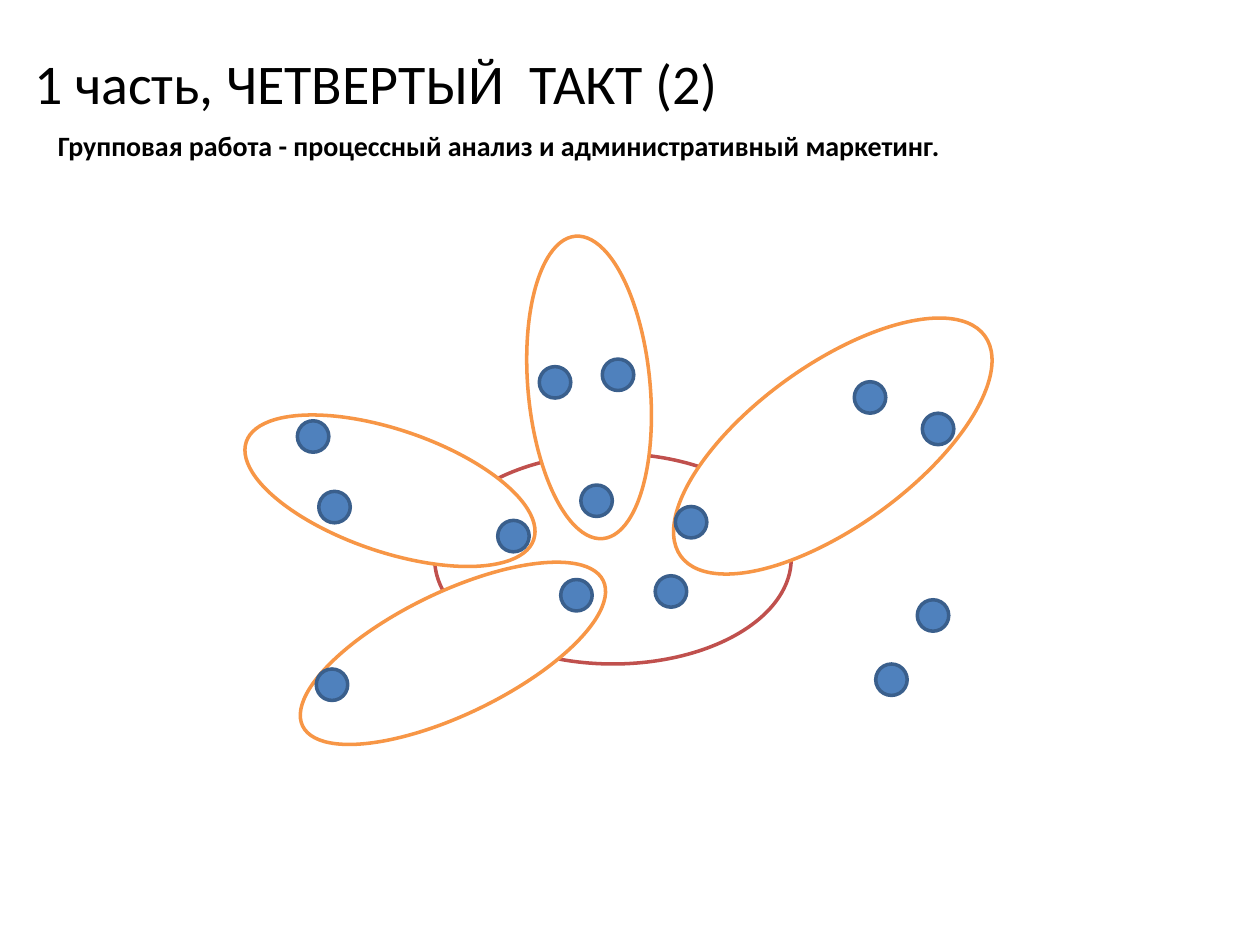
from dataclasses import dataclass

from lxml import etree
from pptx import Presentation
from pptx.dml.color import RGBColor
from pptx.enum.shapes import MSO_SHAPE
from pptx.enum.text import MSO_ANCHOR, PP_ALIGN
from pptx.oxml.ns import qn
from pptx.util import Inches, Pt

OVAL = MSO_SHAPE.OVAL
LEFT = PP_ALIGN.LEFT
TOP, MIDDLE = MSO_ANCHOR.TOP, MSO_ANCHOR.MIDDLE
SLIDE_W, SLIDE_H = Inches(10), Inches(7.5)
FONT = "Calibri"
BLACK, WHITE = "000000", "FFFFFF"
RED, ORANGE = "C0504D", "F79646"
BLUE, DARK_BLUE = "4F81BD", "3A5F8C"


@dataclass
class Box:
    """Percentages of the slide's width and height."""
    x: float
    y: float
    w: float
    h: float

    def emu(self) -> tuple[int, int, int, int]:
        return (int(SLIDE_W * self.x / 100), int(SLIDE_H * self.y / 100),
                int(SLIDE_W * self.w / 100), int(SLIDE_H * self.h / 100))


@dataclass
class Oval:
    box: Box
    line: str
    fill: str = WHITE
    rotation: float = 0


DOT_W, DOT_H = 2.5, 3.33
DOTS = [
    (46.1, 51.33), (39.5, 55.07), (53.6, 53.6), (44.5, 61.33), (52, 60.93),
    (23.6, 44.53), (25.3, 52), (47.8, 38), (42.8, 38.8), (67.8, 40.4),
    (73.2, 43.73), (72.8, 63.47), (69.5, 70.27), (25.1, 70.8),
]
HUB = Oval(Box(34.5, 48, 28.3, 22.27), RED)
PETALS = [
    Oval(Box(22.7, 62.67, 26.5, 12.93), ORANGE, rotation=334.2),
    Oval(Box(51.2, 38.67, 29.8, 17.07), ORANGE, rotation=324.1),
    Oval(Box(34.7, 34.53, 24.1, 12.93), ORANGE, rotation=84.8),
    Oval(Box(18.9, 45.47, 24.1, 12.93), ORANGE, rotation=18.8),
]


def rgb(value: str) -> RGBColor:
    return RGBColor.from_string(value)


def draw_oval(s, oval: Oval) -> None:
    sp = s.shapes.add_shape(OVAL, *oval.box.emu())
    sp.shadow.inherit = False
    sp.rotation = oval.rotation
    sp.fill.solid()
    sp.fill.fore_color.rgb = rgb(oval.fill)
    sp.line.color.rgb = rgb(oval.line)
    sp.line.width = Pt(2)


def fill_placeholder(sp, box: Box, text: str, size: int, bold: bool, anchor):
    sp.left, sp.top, sp.width, sp.height = box.emu()
    tf = sp.text_frame
    tf.text = text
    tf.vertical_anchor = anchor
    p = tf.paragraphs[0]
    p.alignment = LEFT
    p.font.name = FONT
    p.font.size = Pt(size)
    p.font.bold = bold
    p.font.color.rgb = rgb(BLACK)
    return p


def remove_bullet(p) -> None:
    pPr = p._p.get_or_add_pPr()
    pPr.set("marL", "0")
    pPr.set("indent", "0")
    pPr.insert(0, etree.Element(qn("a:buNone")))


def main() -> None:
    prs = Presentation()
    prs.slide_width, prs.slide_height = SLIDE_W, SLIDE_H
    s = prs.slides.add_slide(prs.slide_layouts[1])

    fill_placeholder(s.shapes.title, Box(1.7, 4, 96.7, 9.33),
                     "1 часть, ЧЕТВЕРТЫЙ  ТАКТ (2)", 32, False, MIDDLE)
    p = fill_placeholder(
        s.placeholders[1], Box(3.6, 12.93, 90, 74.93),
        "Групповая работа - процессный анализ и административный маркетинг.",
        16, True, TOP)
    remove_bullet(p)

    dots = [Oval(Box(x, y, DOT_W, DOT_H), DARK_BLUE, BLUE) for x, y in DOTS]
    for oval in [HUB, *PETALS, *dots]:
        draw_oval(s, oval)

    prs.save("out.pptx")


if __name__ == "__main__":
    main()
